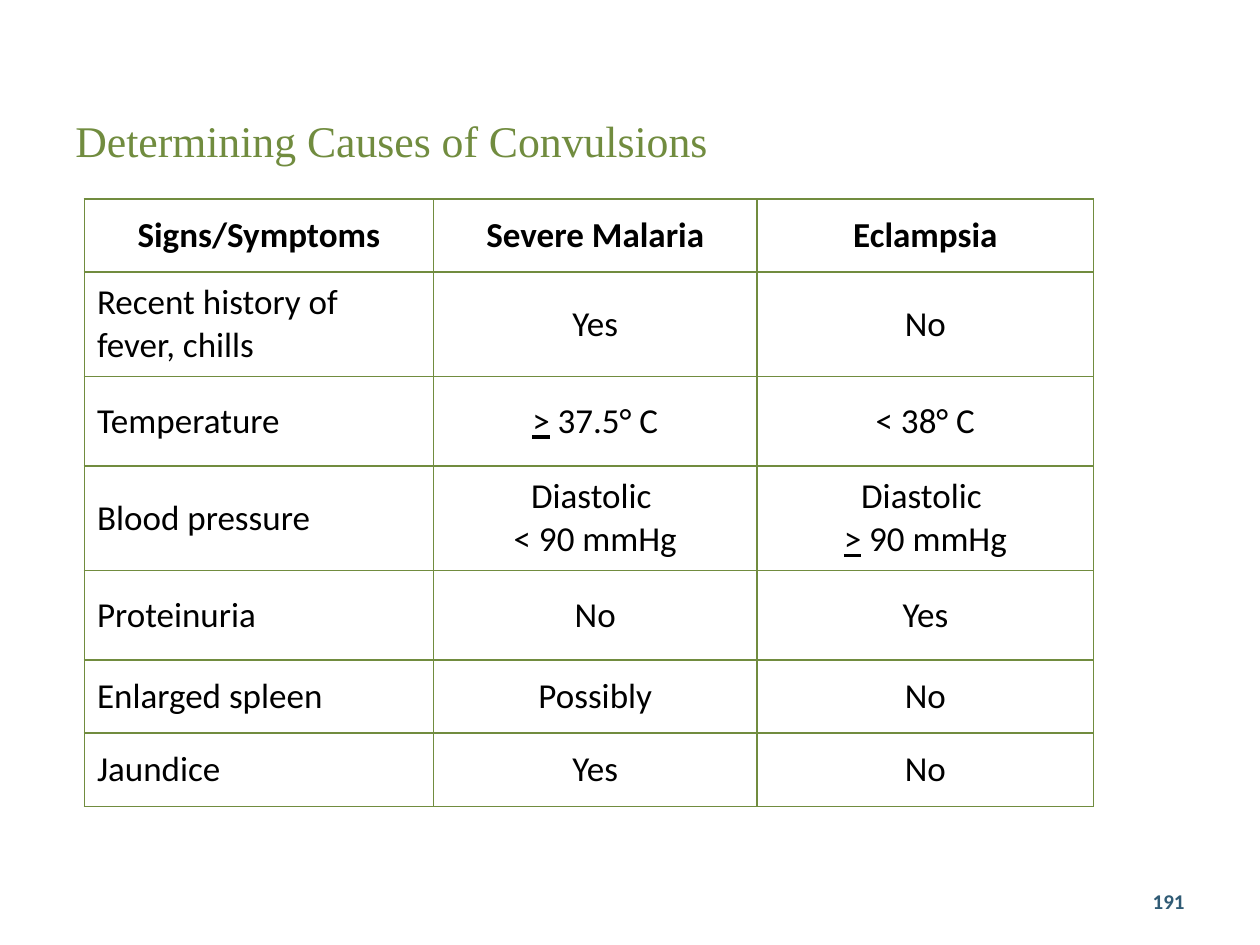
from lxml import etree
from pptx import Presentation
from pptx.dml.color import RGBColor
from pptx.enum.text import MSO_ANCHOR, PP_ALIGN
from pptx.oxml.ns import qn
from pptx.util import Inches, Pt

LEFT, CENTER, RIGHT = PP_ALIGN.LEFT, PP_ALIGN.CENTER, PP_ALIGN.RIGHT
MIDDLE, BOTTOM = MSO_ANCHOR.MIDDLE, MSO_ANCHOR.BOTTOM
GREEN, BLACK, BLUE = "718C3F", "000000", "305B75"

COLUMN_WIDTHS = [2.77, 2.57, 2.67]
ROW_HEIGHTS = [0.58, 0.83, 0.71, 0.83, 0.71, 0.58, 0.58]
ROWS = [
    ["Signs/Symptoms", "Severe Malaria", "Eclampsia"],
    ["Recent history of fever, chills", "Yes", "No"],
    ["Temperature", "> 37.5° C", "< 38° C"],
    ["Blood pressure", "Diastolic \n< 90 mmHg", "Diastolic \n> 90 mmHg"],
    ["Proteinuria", "No", "Yes"],
    ["Enlarged spleen", "Possibly", "No"],
    ["Jaundice", "Yes", "No"],
]


def add_text(paragraph, text, size, color, name="Calibri", bold=False):
    """Add runs to a paragraph; every ">" is underlined to mean "at least"."""
    for number, line in enumerate(text.split("\n")):
        if number:
            paragraph.add_line_break()
        for part in line.partition(">"):
            if part:
                run = paragraph.add_run()
                run.text = part
                run.font.name = name
                run.font.size = Pt(size)
                run.font.bold = bold
                run.font.underline = part == ">"
                run.font.color.rgb = RGBColor.from_string(color)


def set_borders(cell, color, width):
    properties = cell._tc.get_or_add_tcPr()
    for index, side in enumerate(("a:lnL", "a:lnR", "a:lnT", "a:lnB")):
        line = etree.Element(qn(side), w=str(Pt(width)))
        fill = etree.SubElement(line, qn("a:solidFill"))
        etree.SubElement(fill, qn("a:srgbClr"), val=color)
        properties.insert(index, line)


presentation = Presentation()
presentation.slide_width = Inches(10)
presentation.slide_height = Inches(7.5)
slide = presentation.slides.add_slide(presentation.slide_layouts[6])

# Title and page number
for text, box, anchor, align, size, color, name, bold in [
    ("Determining Causes of Convulsions", (0.5, 0.5, 7.75, 0.87),
     BOTTOM, LEFT, 25, GREEN, "Times New Roman", False),
    ("191", (7.17, 6.95, 2.33, 0.4), MIDDLE, RIGHT, 12, BLUE, "Calibri", True),
]:
    shape = slide.shapes.add_textbox(*map(Inches, box))
    frame = shape.text_frame
    frame.word_wrap = True
    frame.vertical_anchor = anchor
    frame.paragraphs[0].alignment = align
    add_text(frame.paragraphs[0], text, size, color, name, bold)

# Comparison table
table = slide.shapes.add_table(
    len(ROWS), len(COLUMN_WIDTHS), Inches(0.67), Inches(1.58),
    Inches(sum(COLUMN_WIDTHS)), Inches(sum(ROW_HEIGHTS))).table
table.horz_banding = False
for column, width in zip(table.columns, COLUMN_WIDTHS):
    column.width = Inches(width)
for row, height in zip(table.rows, ROW_HEIGHTS):
    row.height = Inches(height)

for row_index, row_texts in enumerate(ROWS):
    for column_index, text in enumerate(row_texts):
        cell = table.cell(row_index, column_index)
        is_header = row_index == 0
        cell.vertical_anchor = MIDDLE
        cell.fill.background()
        set_borders(cell, GREEN, 1)
        paragraph = cell.text_frame.paragraphs[0]
        paragraph.alignment = CENTER if is_header or column_index else LEFT
        add_text(paragraph, text, 20, BLACK, bold=is_header)

presentation.save("out.pptx")
